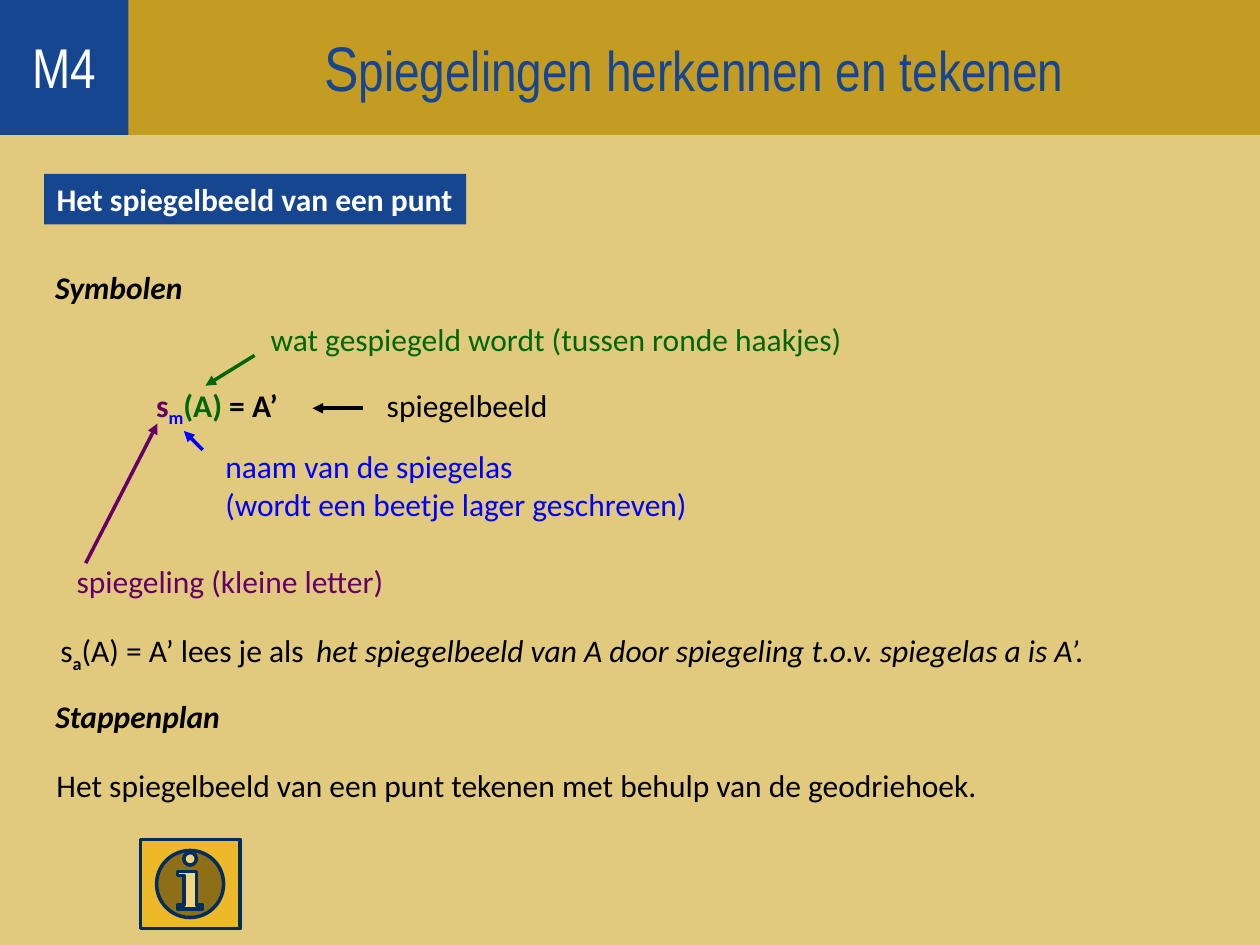
import pptx
import pptx.dml.color
import pptx.enum.shapes
import pptx.enum.text
import pptx.oxml.ns
import pptx.util
from lxml import etree

Pt = pptx.util.Pt
SHAPES = pptx.enum.shapes.MSO_SHAPE
ALIGN = pptx.enum.text.PP_ALIGN
ANCHOR = pptx.enum.text.MSO_ANCHOR
AUTO_SIZE = pptx.enum.text.MSO_AUTO_SIZE

BLUE, GOLD, SAND = "174691", "C59C22", "E1CA7D"
BLACK, PURPLE, GREEN, AXIS_BLUE = "000000", "660066", "006600", "0000FF"
BODY = {"name": "Calibri", "size": Pt(18), "bold": False, "italic": False}
BOLD = {"bold": True}
ITALIC = {"italic": True}
HEADING = {**BOLD, **ITALIC}
BANNER = {"name": "Arial Narrow", "size": Pt(32), "bold": False}
LINE_HEIGHT = 28.8


def colour(hex_value):
    return pptx.dml.color.RGBColor.from_string(hex_value)


def paint(shape, fill, line=None):
    shape.fill.solid()
    shape.fill.fore_color.rgb = colour(fill)
    if line:
        shape.line.color.rgb = colour(line)
        shape.line.width = Pt(2)
    else:
        shape.line.fill.background()


def place(shape, box):
    for name, value in zip(("left", "top", "width", "height"), box):
        setattr(shape, name, Pt(value))


def add_span(para, text, hex_value, formats, subscript=False):
    for index, part in enumerate(text.split("\n")):
        if index:
            para.add_line_break()
        span = para.add_run()
        span.text = part
        for name, value in formats.items():
            setattr(span.font, name, value)
        span.font.color.rgb = colour(hex_value)
        if subscript:
            span.font._element.set("baseline", "-25000")


def add_block(page, box, fill):
    shape = page.shapes.add_shape(SHAPES.RECTANGLE, *map(Pt, box))
    shape.shadow.inherit = False
    paint(shape, fill)
    return shape


def write_line(shape, *spans):
    frame = shape.text_frame
    frame.word_wrap = False
    frame.auto_size = AUTO_SIZE.SHAPE_TO_FIT_TEXT
    frame.vertical_anchor = ANCHOR.TOP
    para = frame.paragraphs[0]
    para.alignment = ALIGN.LEFT
    for text, hex_value, formats, *subscript in spans:
        add_span(para, text, hex_value, {**BODY, **formats}, *subscript)


def add_text(page, box, *spans):
    write_line(page.shapes.add_textbox(*map(Pt, box)), *spans)


def add_arrow(page, start, end, hex_value):
    arrow = page.shapes.add_connector(
        pptx.enum.shapes.MSO_CONNECTOR.STRAIGHT, *map(Pt, start + end))
    arrow.line.color.rgb = colour(hex_value)
    arrow.line.width = Pt(2)
    line = arrow.line._get_or_add_ln()
    etree.SubElement(line, pptx.oxml.ns.qn("a:tailEnd"), type="triangle")
    etree.SubElement(arrow._element.spPr, pptx.oxml.ns.qn("a:effectLst"))


def build_banner(page, box, badge_width):
    left, top, width, height = box
    title = page.shapes.title
    place(title, box)
    paint(title, GOLD)
    frame = title.text_frame
    frame.word_wrap = True
    frame.auto_size = AUTO_SIZE.NONE
    frame.vertical_anchor = ANCHOR.MIDDLE
    frame.margin_left = Pt(badge_width + 7.2)
    para = frame.paragraphs[0]
    para.alignment = ALIGN.CENTER
    add_span(para, "S", BLUE, {**BANNER, "size": Pt(36)})
    add_span(para, "piegelingen herkennen en tekenen", BLUE, BANNER)

    badge = add_block(page, (left, top, badge_width, height), BLUE)
    badge.text_frame.vertical_anchor = ANCHOR.MIDDLE
    para = badge.text_frame.paragraphs[0]
    para.alignment = ALIGN.CENTER
    add_span(para, "M4", "FCFDFE", BANNER)


def build_subject(page, box):
    write_line(add_block(page, box, BLUE),
               ("Het spiegelbeeld van een punt", "FFFFFF", BOLD))


def build_symbols(page, box):
    left, top, width, height = box
    add_text(page, (left, top, 88, LINE_HEIGHT), ("Symbolen", BLACK, HEADING))
    add_text(page, (left + 57.6, top + 67, 86.4, LINE_HEIGHT),
             ("s", PURPLE, BOLD), ("m", AXIS_BLUE, BOLD, True),
             ("(A)", GREEN, BOLD), (" = A’", BLACK, BOLD))
    notes = [
        ("spiegeling (kleine letter)", PURPLE,
         (12.2, 167.8, 191.5, LINE_HEIGHT), (24.5, 172), (65.5, 92.2)),
        ("wat gespiegeld wordt (tussen ronde haakjes)", GREEN,
         (123.1, 29.5, 342.7, LINE_HEIGHT), (121, 53.3), (92.9, 70.6)),
        ("naam van de spiegelas \n(wordt een beetje lager geschreven)", AXIS_BLUE,
         (97.2, 102.2, 280, 50.4), (91.4, 107.3), (80.6, 96.5)),
        ("spiegelbeeld", BLACK,
         (189.4, 67, 106.6, LINE_HEIGHT), (182.9, 83.5), (154.1, 83.5)),
    ]
    for text, hex_value, (x, y, w, h), start, end in notes:
        add_arrow(page, (left + start[0], top + start[1]),
                  (left + end[0], top + end[1]), hex_value)
        add_text(page, (left + x, top + y, w, h), (text, hex_value, {}))


def build_reading(page, box):
    left, top, width, height = box
    add_text(page, (left, top, 155.5, height),
             ("s", BLACK, {}), ("a", BLACK, BOLD, True),
             ("(A) = A’ lees je als", BLACK, {}))
    add_text(page, (left + 146.2, top, width - 146.2, height),
             ("het spiegelbeeld van A door spiegeling t.o.v. spiegelas a is A’.",
              BLACK, ITALIC))


def build_steps(page, box):
    left, top, width, height = box
    add_text(page, (left, top, 108.7, LINE_HEIGHT), ("Stappenplan", BLACK, HEADING))
    add_text(page, (left + 0.7, top + 39.6, width, LINE_HEIGHT),
             ("Het spiegelbeeld van een punt tekenen met behulp van de geodriehoek.",
              BLACK, {}))
    button = page.shapes.add_shape(
        SHAPES.ACTION_BUTTON_INFORMATION,
        Pt(left + 55.7), Pt(top + 85), Pt(56.9), Pt(51.1))
    button.shadow.inherit = False
    paint(button, "EDB928", "002C5E")


def main():
    deck = pptx.Presentation()
    deck.slide_width, deck.slide_height = Pt(720), Pt(540)
    page = deck.slides.add_slide(deck.slide_layouts.get_by_name("Title Only"))
    page.background.fill.solid()
    page.background.fill.fore_color.rgb = colour(SAND)
    build_banner(page, (0, -1.4, 720, 78.5), 73.4)
    build_subject(page, (25.2, 99.4, 241.2, LINE_HEIGHT))
    build_symbols(page, (24.5, 149.8, 466, 197))
    build_reading(page, (27.4, 357.1, 604.8, LINE_HEIGHT))
    build_steps(page, (24.5, 394.6, 544.3, 136))
    deck.save("out.pptx")


if __name__ == "__main__":
    main()
